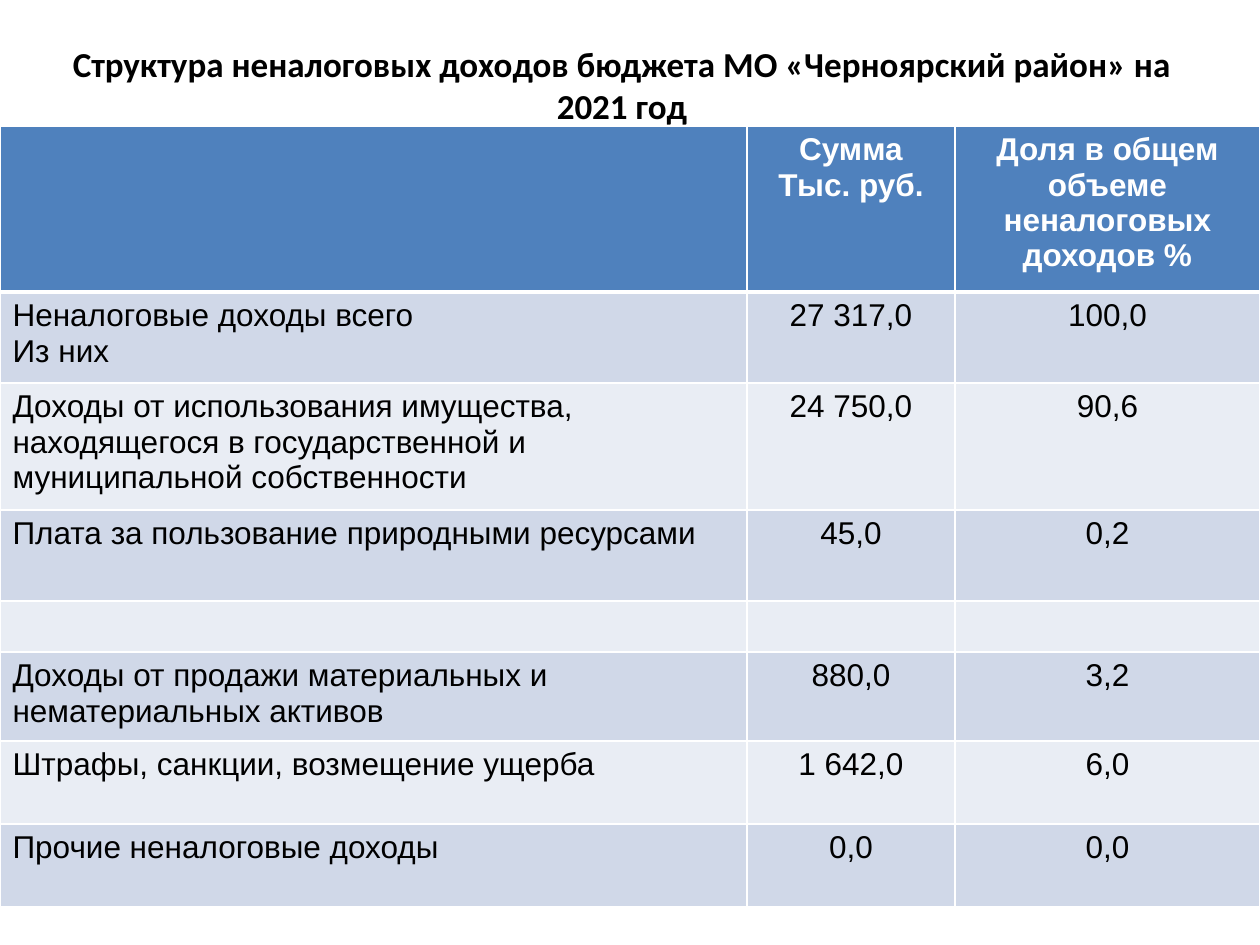
from lxml import etree
from pptx import Presentation
from pptx.dml.color import RGBColor
from pptx.enum.text import MSO_ANCHOR, MSO_AUTO_SIZE, PP_ALIGN
from pptx.oxml.ns import qn
from pptx.util import Emu, Pt

LEFT, CENTER = PP_ALIGN.LEFT, PP_ALIGN.CENTER
MIDDLE, GROW = MSO_ANCHOR.MIDDLE, MSO_AUTO_SIZE.SHAPE_TO_FIT_TEXT

# Content: each cell is a list of paragraphs
TITLE = "Структура неналоговых доходов бюджета МО «Черноярский район» на 2021 год"
ROWS = [
    ([], ["Сумма", "Тыс. руб."], ["Доля в общем объеме неналоговых доходов %"]),
    (["Неналоговые доходы всего", "Из них"], ["27 317,0"], ["100,0"]),
    (["Доходы от использования имущества, находящегося в государственной "
      "и муниципальной собственности"], ["24 750,0"], ["90,6"]),
    (["Плата за пользование природными ресурсами"], ["45,0"], ["0,2"]),
    ([], [], []),
    (["Доходы от продажи материальных и нематериальных активов"],
     ["880,0"], ["3,2"]),
    (["Штрафы, санкции, возмещение ущерба"], ["1 642,0"], ["6,0"]),
    (["Прочие неналоговые доходы"], ["0,0"], ["0,0"]),
]

# Layout in px
PX = 914400 // 126
PAGE = (1260, 945)
TITLE_BOX = (42, 42, 1160, 84)
TABLE_TOP = 126
COLUMN_WIDTHS = [747, 208, 305]
ROW_HEIGHTS = [166, 91, 127, 91, 51, 89, 83, 83]
COLORS = {"header": "4F81BD", "odd": "D0D8E8", "even": "E9EDF4",
          "white": "FFFFFF", "text": "000000"}


def px(value):
    return Emu(value * PX)


def color(name):
    return RGBColor.from_string(COLORS[name])


def add_text(para, text, font, size, ink, bold, align):
    para.alignment = align
    span = para.add_run()
    span.text = text
    span.font.name = font
    span.font.size = Pt(size)
    span.font.bold = bold
    span.font.color.rgb = color(ink)


def add_borders(cell, widths):
    properties = cell._tc.get_or_add_tcPr()
    for side, width in widths.items():
        line = etree.SubElement(properties, qn(f"a:ln{side}"), w=str(Pt(width)))
        fill = etree.SubElement(line, qn("a:solidFill"))
        etree.SubElement(fill, qn("a:srgbClr"), val=COLORS["white"])


def fill_cell(cell, paragraphs, row, column):
    header = row == 0
    add_borders(cell, {"L": 1, "R": 1, "T": 3 if row == 1 else 1,
                       "B": 3 if header else 1})
    cell.fill.solid()
    cell.fill.fore_color.rgb = color(
        "header" if header else "odd" if row % 2 else "even")
    frame = cell.text_frame
    for index, text in enumerate(paragraphs):
        para = frame.add_paragraph() if index else frame.paragraphs[0]
        add_text(para, text, "Arial", 18, "white" if header else "text",
                 header, CENTER if column else LEFT)


deck = Presentation()
deck.slide_width, deck.slide_height = map(px, PAGE)
page = deck.slides.add_slide(deck.slide_layouts[5])

# Title
title = page.shapes.title
title.left, title.top, title.width, title.height = map(px, TITLE_BOX)
frame = title.text_frame
frame.margin_left = frame.margin_right = frame.margin_top = frame.margin_bottom = 0
frame.word_wrap = True
frame.auto_size = GROW
frame.vertical_anchor = MIDDLE
add_text(frame.paragraphs[0], TITLE, "Calibri", 20, "text", True, CENTER)

# Table
table = page.shapes.add_table(
    len(ROWS), len(COLUMN_WIDTHS), 0, px(TABLE_TOP),
    px(sum(COLUMN_WIDTHS)), px(sum(ROW_HEIGHTS))).table
for column, width in zip(table.columns, COLUMN_WIDTHS):
    column.width = px(width)
for table_row, height in zip(table.rows, ROW_HEIGHTS):
    table_row.height = px(height)
for row, cells in enumerate(ROWS):
    for column, paragraphs in enumerate(cells):
        fill_cell(table.cell(row, column), paragraphs, row, column)

deck.save("out.pptx")
